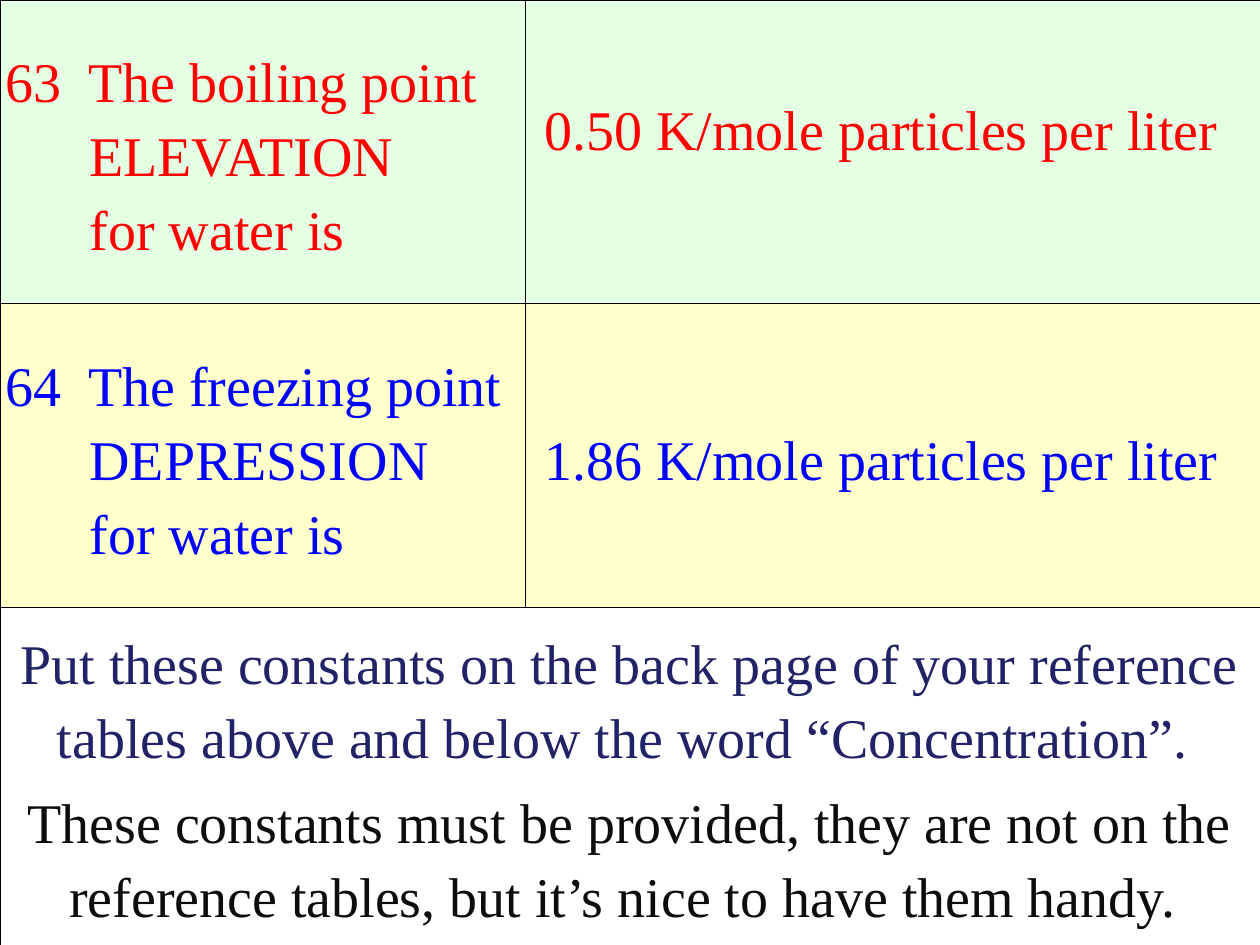
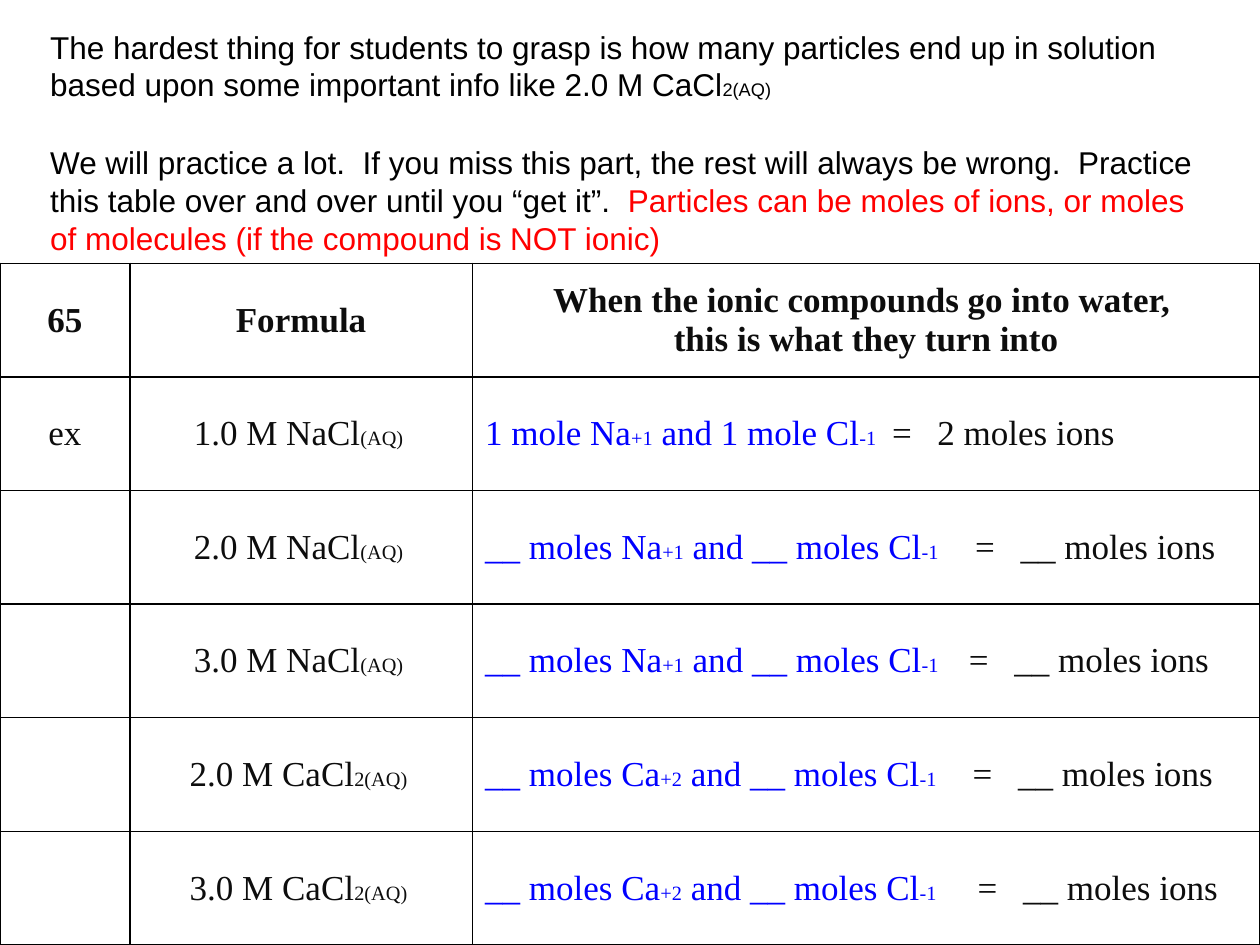
from lxml import etree
from pptx import Presentation
from pptx.dml.color import RGBColor
from pptx.enum import text as t
from pptx.oxml import ns
from pptx.util import Inches, Pt

RED = RGBColor(0xFF, 0, 0)
BLUE = RGBColor(0, 0, 0xFF)
NAVY = RGBColor(0x22, 0x22, 0x67)
INK = RGBColor(0x0D, 0x0D, 0x0D)
BLACK = RGBColor(0, 0, 0)
GREEN = RGBColor(0xE5, 0xFF, 0xE5)
CREAM = RGBColor(0xFF, 0xFF, 0xCC)

LARGE = {"name": "Times New Roman", "size": Pt(32)}
SMALL = {"name": "Times New Roman", "size": Pt(20)}
INTRO = {"name": "Arial", "size": Pt(18)}
LOOSE = {"line_spacing": 1.19, "space_after": Pt(6)}
MID = {"alignment": t.PP_ALIGN.CENTER}
SUB, SUP = -25, 30


def assign(item, form):
    for key, val in form.items():
        setattr(item, key, val)


def child(node, tag, **attrs):
    return etree.SubElement(node, ns.qn(tag), **attrs)


def write(para, runs, font, form=None):
    """Fill a paragraph with (text, colour, baseline) runs."""
    assign(para, form or {})
    for words, color, base in runs:
        for num, line in enumerate(words.split("\n")):
            if num:
                para.add_line_break()
            run = para.add_run()
            run.text = line
            assign(run.font, font)
            run.font.color.rgb = color
            if base:
                run._r.get_or_add_rPr().set("baseline", str(base))


def hang(para, size):
    """Indent every line but the first."""
    props = para._p.get_or_add_pPr()
    props.set("marL", str(Inches(size)))
    props.set("indent", str(-Inches(size)))


def stops(para, *spots):
    tabs = child(para._p.get_or_add_pPr(), "a:tabLst")
    for spot in spots:
        child(tabs, "a:tab", pos=str(Inches(spot)), algn="l")


def border(cell, width):
    props = cell._tc.get_or_add_tcPr()
    for side in "LRTB":
        line = child(props, "a:ln" + side, w=str(Pt(width)))
        child(child(line, "a:solidFill"), "a:srgbClr", val=str(BLACK))


def grid(slide, top, cols, rows, width):
    """Add a plain ruled table and return it."""
    frame = slide.shapes.add_table(
        len(rows), len(cols), 0, Inches(top), Inches(sum(cols)), Inches(sum(rows)))
    table = frame.table
    assign(table, {"first_row": False, "horz_banding": False})
    for col, size in zip(table.columns, cols):
        col.width = Inches(size)
    for row, size in zip(table.rows, rows):
        row.height = Inches(size)
    for cell in table.iter_cells():
        border(cell, width)
        cell.fill.background()
        cell.vertical_anchor = t.MSO_ANCHOR.MIDDLE
    return table


def constants(slide):
    table = grid(slide, 0, [4.17, 5.83], [2.41, 2.41, 2.68], 0.25)
    for cell in table.iter_cells():
        assign(cell, dict.fromkeys(
            ["margin_left", "margin_right", "margin_top", "margin_bottom"], Inches(0.04)))
    facts = [
        ("63  The boiling point\nELEVATION\nfor water is",
         "0.50 K/mole particles per liter", RED, GREEN),
        ("64  The freezing point\nDEPRESSION\nfor water is",
         "1.86 K/mole particles per liter", BLUE, CREAM),
    ]
    for row, (name, value, color, tint) in enumerate(facts):
        for col, words in enumerate((name, value)):
            cell = table.cell(row, col)
            cell.fill.solid()
            cell.fill.fore_color.rgb = tint
            write(cell.text_frame.paragraphs[0], [(words, color, 0)], LARGE, LOOSE)
        hang(table.cell(row, 0).text_frame.paragraphs[0], 0.67)
        table.cell(row, 1).margin_left = Inches(0.15)
    table.cell(0, 1).margin_bottom = Inches(0.45)

    note = table.cell(2, 0)
    note.merge(table.cell(2, 1))
    frame = note.text_frame
    write(frame.paragraphs[0], [(
        "Put these constants on the back page of your reference tables above "
        "and below the word “Concentration”. ", NAVY, 0)], LARGE, LOOSE | MID)
    write(frame.add_paragraph(), [(
        "These constants must be provided, they are not on the reference tables, "
        "but it’s nice to have them handy. ", INK, 0)], LARGE, LOOSE | MID)


def intro(slide):
    box = slide.shapes.add_textbox(Inches(0.3), Inches(0.17), Inches(9.33), Inches(1.92))
    frame = box.text_frame
    frame.word_wrap = True
    write(frame.paragraphs[0], [
        ("The hardest thing for students to grasp is how many particles end up in "
         "solution based upon some important info like 2.0 M CaCl", BLACK, 0),
        ("2(AQ)", BLACK, SUB)], INTRO, {"space_after": Pt(23)})
    write(frame.add_paragraph(), [
        ("We will practice a lot.  If you miss this part, the rest will always be "
         "wrong.  Practice this table over and over until you “get it”.  ", BLACK, 0),
        ("Particles can be moles of ions, or moles of molecules "
         "(if the compound is NOT ionic)", RED, 0)], INTRO)


def ions(slide):
    table = grid(slide, 2.09, [1.03, 2.72, 6.25], [5.41 / 6] * 6, 1)

    def para(row, col):
        return table.cell(row, col).text_frame.paragraphs[0]

    heads = ["65", "Formula",
             "When the ionic compounds go into water, \nthis is what they turn into"]
    for col, head in enumerate(heads):
        write(para(0, col), [(head, INK, 0)], SMALL | {"bold": True}, MID)
    write(para(1, 0), [("ex", INK, 0)], SMALL, MID)

    some = "__ moles"
    salts = [
        ("1.0 M NaCl", "(AQ) ", "1 mole", "Na", "+1", "2 moles", 3.23),
        ("2.0 M NaCl", "(AQ) ", some, "Na", "+1", some, 3.89),
        ("3.0 M NaCl", "(AQ) ", some, "Na", "+1", some, 3.84),
        ("2.0 M CaCl", "2(AQ) ", some, "Ca", "+2", some, 3.87),
        ("3.0 M CaCl", "2(AQ) ", some, "Ca", "+2", some, 3.91),
    ]
    for row, (salt, state, count, metal, charge, total, equal) in enumerate(salts, 1):
        write(para(row, 1), [(salt, INK, 0), (state, INK, SUB)], SMALL, MID)
        split = para(row, 2)
        write(split, [
            (f"{count} {metal}", BLUE, 0), (charge, BLUE, SUP),
            (f" and {count} Cl", BLUE, 0), ("-1", BLUE, SUP),
            (f"\t=\t{total} ions", INK, 0)], SMALL)
        stops(split, equal, equal + 0.36)


def main():
    deck = Presentation()
    assign(deck, {"slide_width": Inches(10), "slide_height": Inches(7.5)})
    blank = deck.slide_layouts[6]
    constants(deck.slides.add_slide(blank))
    slide = deck.slides.add_slide(blank)
    intro(slide)
    ions(slide)
    deck.save("out.pptx")


if __name__ == "__main__":
    main()
